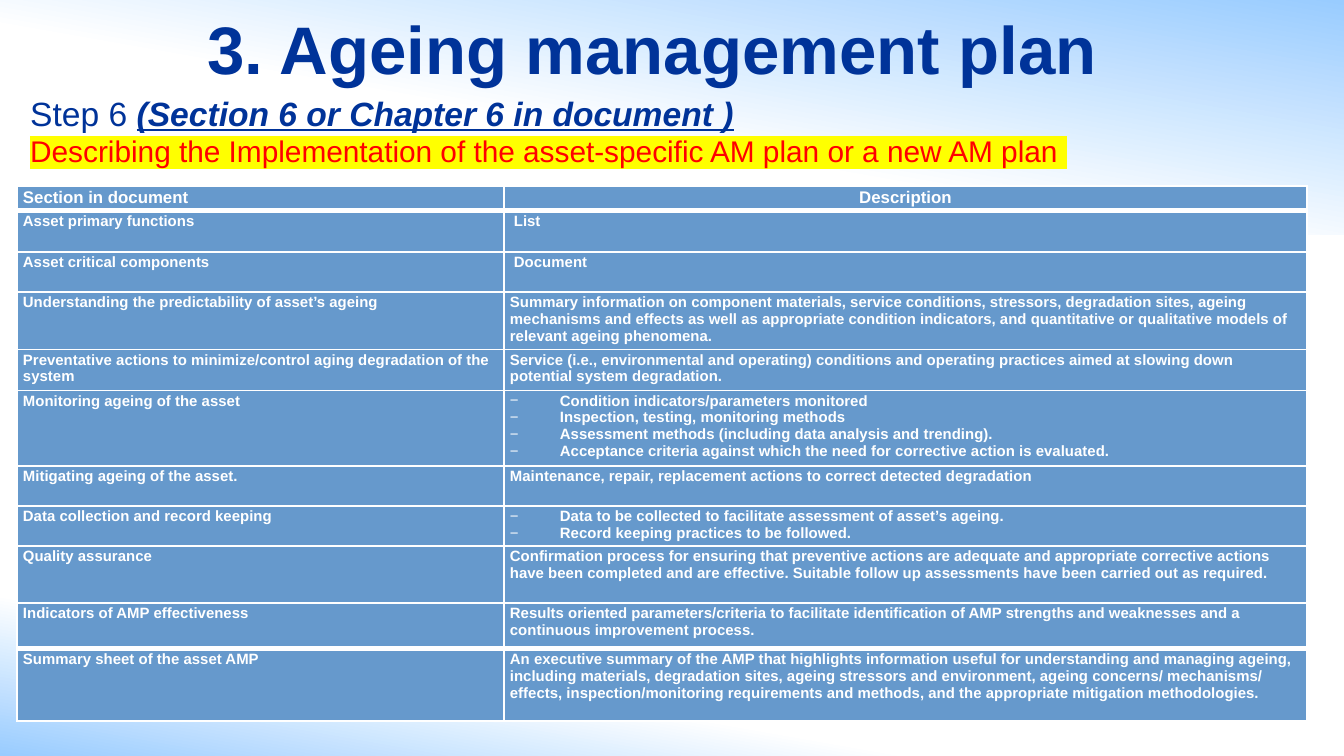
from lxml import etree
from pptx import Presentation
from pptx import util as u
from pptx.dml import color
from pptx.enum import shapes, text
from pptx.oxml import ns

PX = u.Inches(1) / 134.4
NAVY, WHITE, SKY, STEEL = "003399", "FFFFFF", "99CCFF", "6699CC"
RED, YELLOW = "FF0000", "FFFF00"

COLUMN_WIDTHS = [487, 803]
ROW_HEIGHTS = [25, 41, 40, 56, 41, 73, 40, 40, 57, 46, 72]
SECTIONS = [
    ("Section in document", "Description"),
    ("Asset primary functions", "List"),
    ("Asset critical components", "Document"),
    ("Understanding the predictability of asset’s ageing",
     "Summary information on component materials, service conditions, stressors, "
     "degradation sites, ageing mechanisms and effects as well as appropriate condition "
     "indicators, and quantitative or qualitative models of relevant ageing phenomena."),
    ("Preventative actions to minimize/control aging degradation of the system",
     "Service (i.e., environmental and operating) conditions and operating practices "
     "aimed at slowing down potential system degradation."),
    ("Monitoring ageing of the asset",
     ["Condition indicators/parameters monitored",
      "Inspection, testing, monitoring methods",
      "Assessment methods (including data analysis and trending).",
      "Acceptance criteria against which the need for corrective action is evaluated."]),
    ("Mitigating ageing of the asset.",
     "Maintenance, repair, replacement actions to correct detected degradation"),
    ("Data collection and record keeping",
     ["Data to be collected to facilitate assessment of asset’s ageing.",
      "Record keeping practices to be followed."]),
    ("Quality assurance",
     "Confirmation process for ensuring that preventive actions are adequate and "
     "appropriate corrective actions have been completed and are effective. Suitable "
     "follow up assessments have been carried out as required."),
    ("Indicators of AMP effectiveness",
     "Results oriented parameters/criteria to facilitate identification of AMP strengths "
     "and weaknesses and a continuous improvement process."),
    ("Summary sheet of the asset AMP",
     "An executive summary of the AMP that highlights information useful for understanding "
     "and managing ageing, including materials, degradation sites, ageing stressors and "
     "environment, ageing concerns/ mechanisms/ effects, inspection/monitoring requirements "
     "and methods, and the appropriate mitigation methodologies."),
]


def px(*lengths):
    """Turn pixel lengths into a list of EMU lengths."""
    return [u.Emu(round(length * PX)) for length in lengths]


def rgb(value):
    """Turn a hex string into a colour."""
    return color.RGBColor.from_string(value)


def style(run, size, hue, bold=False):
    """Format one run of text."""
    run.font.name, run.font.size, run.font.bold = "Arial", u.Pt(size), bold
    run.font.color.rgb = rgb(hue)


def add_run(paragraph, words, size, hue, bold=False):
    """Append a formatted run and return it."""
    run = paragraph.add_run()
    run.text = words
    style(run, size, hue, bold)
    return run


def highlight(run, hue):
    """Put a marker colour behind a run."""
    marker = etree.Element(ns.qn("a:highlight"))
    etree.SubElement(marker, ns.qn("a:srgbClr"), val=hue)
    run.font.fill._xPr.find(ns.qn("a:solidFill")).addnext(marker)


def add_glow(slide, box, angle, white_at):
    """Fill a box with a gradient from sky blue to white."""
    glow = slide.shapes.add_shape(shapes.MSO_SHAPE.RECTANGLE, *px(*box))
    glow.shadow.inherit = False
    glow.line.fill.background()
    glow.fill.gradient()
    glow.fill.gradient_angle = angle
    for stop, hue, position in zip(glow.fill.gradient_stops, (SKY, WHITE), (0, white_at)):
        stop.color.rgb = rgb(hue)
        stop.position = position


def add_text_frame(slide, box):
    """Add a wrapping text box and return its frame."""
    frame = slide.shapes.add_textbox(*px(*box)).text_frame
    frame.word_wrap = True
    return frame


def add_title(slide, box):
    """Add the centred slide title."""
    frame = add_text_frame(slide, box)
    frame.vertical_anchor = text.MSO_ANCHOR.MIDDLE
    title = frame.paragraphs[0]
    title.alignment = text.PP_ALIGN.CENTER
    add_run(title, "3. Ageing management plan ", 36, NAVY, True)


def add_step(slide, box):
    """Add the step heading and its highlighted description."""
    frame = add_text_frame(slide, box)
    heading = frame.paragraphs[0]
    add_run(heading, "Step 6 ", 18, NAVY)
    reference = add_run(heading, "(Section 6 or Chapter 6 in document )", 18, NAVY, True)
    reference.font.italic = reference.font.underline = True
    purpose = add_run(
        frame.add_paragraph(),
        "Describing the Implementation of the asset-specific AM plan or a new AM plan ",
        16, RED)
    highlight(purpose, YELLOW)


def add_dash(paragraph):
    """Give a paragraph a hanging dash."""
    indent, = px(50)
    properties = paragraph._p.get_or_add_pPr()
    properties.set("marL", str(indent))
    properties.set("indent", str(-indent))
    etree.SubElement(properties, ns.qn("a:buFont"), typeface="Arial")
    etree.SubElement(properties, ns.qn("a:buChar"), char="−")


def add_borders(cell, top, bottom):
    """Draw white cell borders with the given top and bottom widths in points."""
    properties = cell._tc.get_or_add_tcPr()
    for place, (side, width) in enumerate(zip("LRTB", (1, 1, top, bottom))):
        border = etree.Element(ns.qn(f"a:ln{side}"), w=str(u.Pt(width)))
        fill = etree.SubElement(border, ns.qn("a:solidFill"))
        etree.SubElement(fill, ns.qn("a:srgbClr"), val=WHITE)
        properties.insert(place, border)


def fill_cell(cell, content, size, left):
    """Write a text or a dashed list into a table cell."""
    cell.fill.solid()
    cell.fill.fore_color.rgb = rgb(STEEL)
    cell.margin_left, cell.margin_right, cell.margin_top, cell.margin_bottom = px(left, 6, 2, 2)
    dashed = isinstance(content, list)
    cell.text_frame.text = "\n".join(content) if dashed else content
    for paragraph in cell.text_frame.paragraphs:
        if dashed:
            add_dash(paragraph)
        for run in paragraph.runs:
            style(run, size, WHITE, True)


def add_sections(slide, left, top):
    """Add the table of document sections."""
    last = len(SECTIONS) - 1
    box = px(left, top, sum(COLUMN_WIDTHS), sum(ROW_HEIGHTS))
    table = slide.shapes.add_table(len(SECTIONS), len(COLUMN_WIDTHS), *box).table
    table.horz_banding = False
    for column, width in zip(table.columns, px(*COLUMN_WIDTHS)):
        column.width = width
    for index, (row, height) in enumerate(zip(table.rows, px(*ROW_HEIGHTS))):
        row.height = height
        for cell, content in zip(row.cells, SECTIONS[index]):
            margin = 10 if content in ("List", "Document") else 6
            fill_cell(cell, content, 8 if index else 9, margin)
            add_borders(cell, 3 if index in (1, last) else 1, 3 if index in (0, last - 1) else 1)
    table.cell(0, 1).text_frame.paragraphs[0].alignment = text.PP_ALIGN.CENTER


def main():
    """Build and save the slide."""
    deck = Presentation()
    deck.slide_width, deck.slide_height = px(1344, 756)
    slide = deck.slides.add_slide(deck.slide_layouts[6])
    add_glow(slide, (0, 585, 937, 171), 80, 0.48)
    add_glow(slide, (0, 0, 1344, 235), 260, 0.56)
    add_title(slide, (-20, 0, 1364, 95))
    add_sections(slide, 17, 186)
    add_step(slide, (17, 86, 1249, 90))
    deck.save("out.pptx")


if __name__ == "__main__":
    main()
